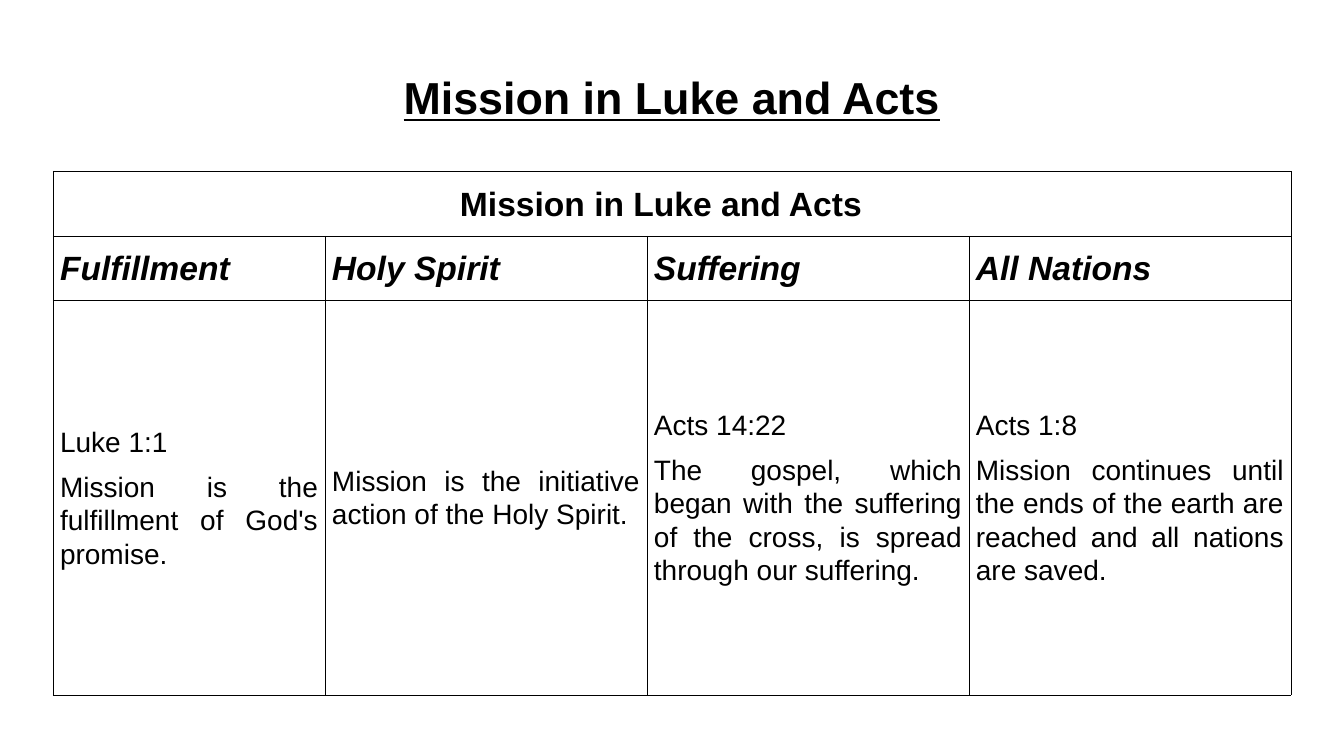
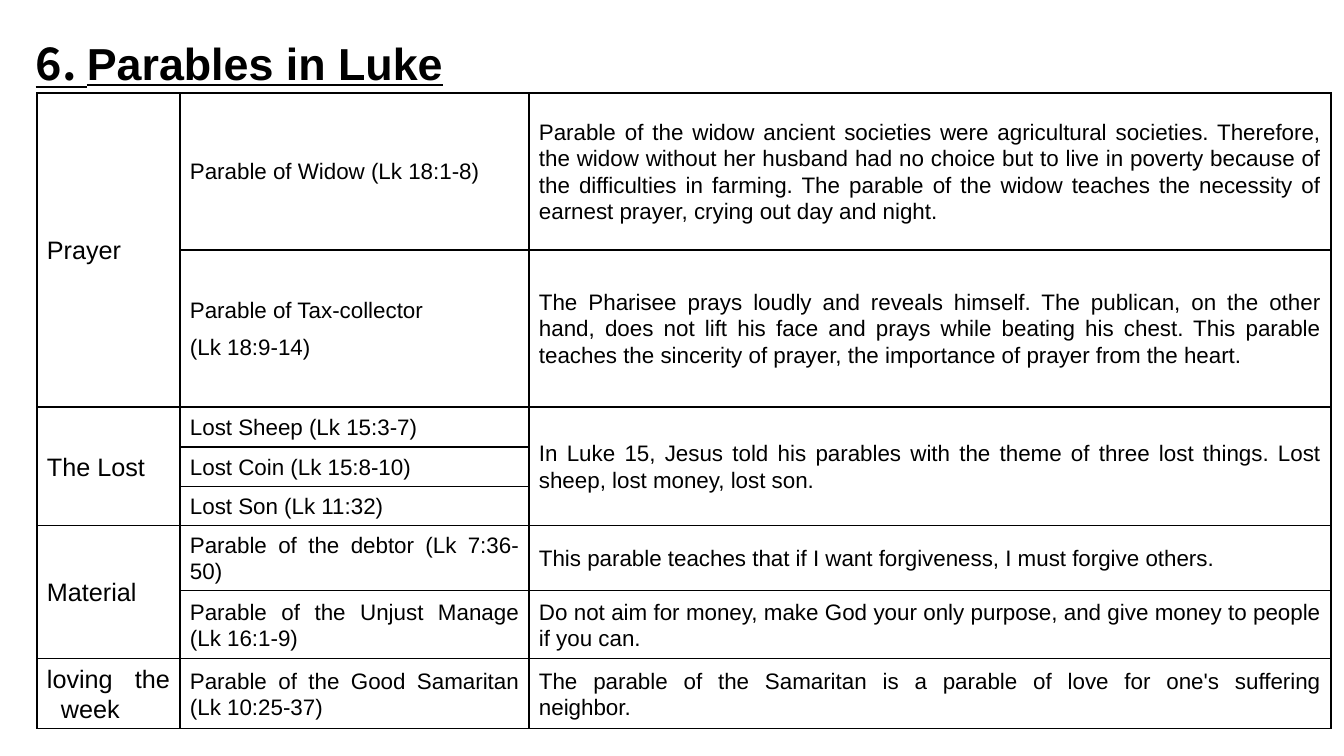
from lxml.etree import SubElement
from pptx import Presentation
from pptx.dml.color import RGBColor
from pptx.enum.text import MSO_ANCHOR, PP_ALIGN
from pptx.oxml.ns import qn
from pptx.util import Pt

PX = 12192000 / 1344
BLACK = RGBColor(0, 0, 0)
WHITE = RGBColor(255, 255, 255)
FONT, NUMBER_FONT = "Arial", "Noto Sans CJK KR"
TITLE = {"size": Pt(32), "bold": True, "underline": True}
THEME = {"size": Pt(24), "bold": True}
HEADING = {"size": Pt(24), "bold": True, "italic": True}
BODY = {"size": Pt(20)}
TOPIC = {"size": Pt(18)}
PARABLE = {"size": Pt(16)}


def px(n):
    return round(n * PX)


def add_title(s, box, parts):
    """Add an underlined title from (text, font name) parts."""
    tf = s.shapes.add_textbox(*map(px, box)).text_frame
    tf.word_wrap = True
    tf.vertical_anchor = MSO_ANCHOR.MIDDLE
    p = tf.paragraphs[0]
    p.alignment = PP_ALIGN.CENTER
    for text, name in parts:
        r = p.add_run()
        r.text = text
        r.font.name = name
        r.font.color.rgb = BLACK
        for key, value in TITLE.items():
            setattr(r.font, key, value)


def add_grid(s, at, cols, rows, texts, styles, merges, look):
    """Add a bordered table; styles holds one font format per cell."""
    frame = s.shapes.add_table(len(rows), len(cols), px(at[0]), px(at[1]),
                               px(sum(cols)), px(sum(rows)))
    table = frame.table
    table.first_row = table.horz_banding = False
    for column, width in zip(table.columns, cols):
        column.width = px(width)
    for row, height in zip(table.rows, rows):
        row.height = px(height)
    for first, last in merges:
        table.cell(*first).merge(table.cell(*last))
    for i, row in enumerate(texts):
        for j, text in enumerate(row):
            cell = table.cell(i, j)
            cell.vertical_anchor = MSO_ANCHOR.MIDDLE
            cell.margin_left = cell.margin_right = px(look["side"])
            cell.margin_top = cell.margin_bottom = px(look["edge"])
            for side in ("a:lnL", "a:lnR", "a:lnT", "a:lnB"):
                ln = SubElement(cell._tc.tcPr, qn(side), w=str(Pt(look["line"])))
                fill = SubElement(ln, qn("a:solidFill"))
                SubElement(fill, qn("a:srgbClr"), val=str(BLACK))
            cell.fill.solid()
            cell.fill.fore_color.rgb = WHITE
            cell.text_frame.text = text
            for p in cell.text_frame.paragraphs:
                p.alignment = PP_ALIGN.JUSTIFY
                p.line_spacing = look["spacing"]
                p.space_after = Pt(8)
                for font in [p.font] + [r.font for r in p.runs]:
                    font.name = FONT
                    font.color.rgb = BLACK
                    for key, value in styles[i][j].items():
                        setattr(font, key, value)
    return table


prs = Presentation()
prs.slide_width, prs.slide_height = px(1344), px(756)
blank = prs.slide_layouts[6]

# Mission
s = prs.slides.add_slide(blank)
add_title(s, (67, 34, 1210, 126), [("Mission in Luke and Acts", FONT)])
missions = [
    ("Mission in Luke and Acts", "", "", ""),
    ("Fulfillment", "Holy Spirit", "Suffering", "All Nations"),
    ("Luke 1:1\nMission is the fulfillment of God's promise.",
     "Mission is the initiative action of the Holy Spirit.",
     "Acts 14:22\nThe gospel, which began with the suffering of the cross, "
     "is spread through our suffering.",
     "Acts 1:8\nMission continues until the ends of the earth are reached "
     "and all nations are saved."),
]
table = add_grid(s, (53, 171), [272, 322, 322, 322], [65, 64, 395], missions,
                 [[THEME] * 4, [HEADING] * 4, [BODY] * 4], [((0, 0), (0, 3))],
                 {"side": 7, "edge": 2, "line": 0.28, "spacing": 1.07})
theme = table.cell(0, 0)
theme.margin_right = px(29)
theme.text_frame.paragraphs[0].alignment = PP_ALIGN.CENTER

# Parables
s = prs.slides.add_slide(blank)
add_title(s, (5, 0, 469, 125), [("6. ", NUMBER_FONT), ("Parables in Luke", FONT)])
parables = [
    ("Prayer", "Parable of Widow (Lk 18:1-8)",
     "Parable of the widow ancient societies were agricultural societies. "
     "Therefore, the widow without her husband had no choice but to live in "
     "poverty because of the difficulties in farming. The parable of the widow "
     "teaches the necessity of earnest prayer, crying out day and night."),
    ("", "Parable of Tax-collector\n(Lk 18:9-14)",
     "The Pharisee prays loudly and reveals himself. The publican, on the other "
     "hand, does not lift his face and prays while beating his chest. This "
     "parable teaches the sincerity of prayer, the importance of prayer from "
     "the heart."),
    ("The Lost", "Lost Sheep (Lk 15:3-7)",
     "In Luke 15, Jesus told his parables with the theme of three lost things. "
     "Lost sheep, lost money, lost son."),
    ("", "Lost Coin (Lk 15:8-10)", ""),
    ("", "Lost Son (Lk 11:32)", ""),
    ("Material", "Parable of the debtor (Lk 7:36-50)",
     "This parable teaches that if I want forgiveness, I must forgive others."),
    ("", "Parable of the Unjust Manage\v(Lk 16:1-9)",
     "Do not aim for money, make God your only purpose, and give money to "
     "people if you can."),
    ("loving the week", "Parable of the Good Samaritan (Lk 10:25-37)",
     "The parable of the Samaritan is a parable of love for one's suffering\v"
     "neighbor."),
]
merges = [((0, 0), (1, 0)), ((2, 0), (4, 0)), ((2, 2), (4, 2)), ((5, 0), (6, 0))]
table = add_grid(s, (37, 93), [143, 349, 802], [157, 157, 40, 40, 39, 65, 68, 69],
                 parables, [[TOPIC, PARABLE, PARABLE]] * len(parables), merges,
                 {"side": 10, "edge": 3, "line": 1, "spacing": 1.06})
hanging = table.cell(7, 0).text_frame.paragraphs[0]._p.get_or_add_pPr()
hanging.set("marL", str(px(14)))
hanging.set("indent", str(px(-14)))

prs.save("out.pptx")
